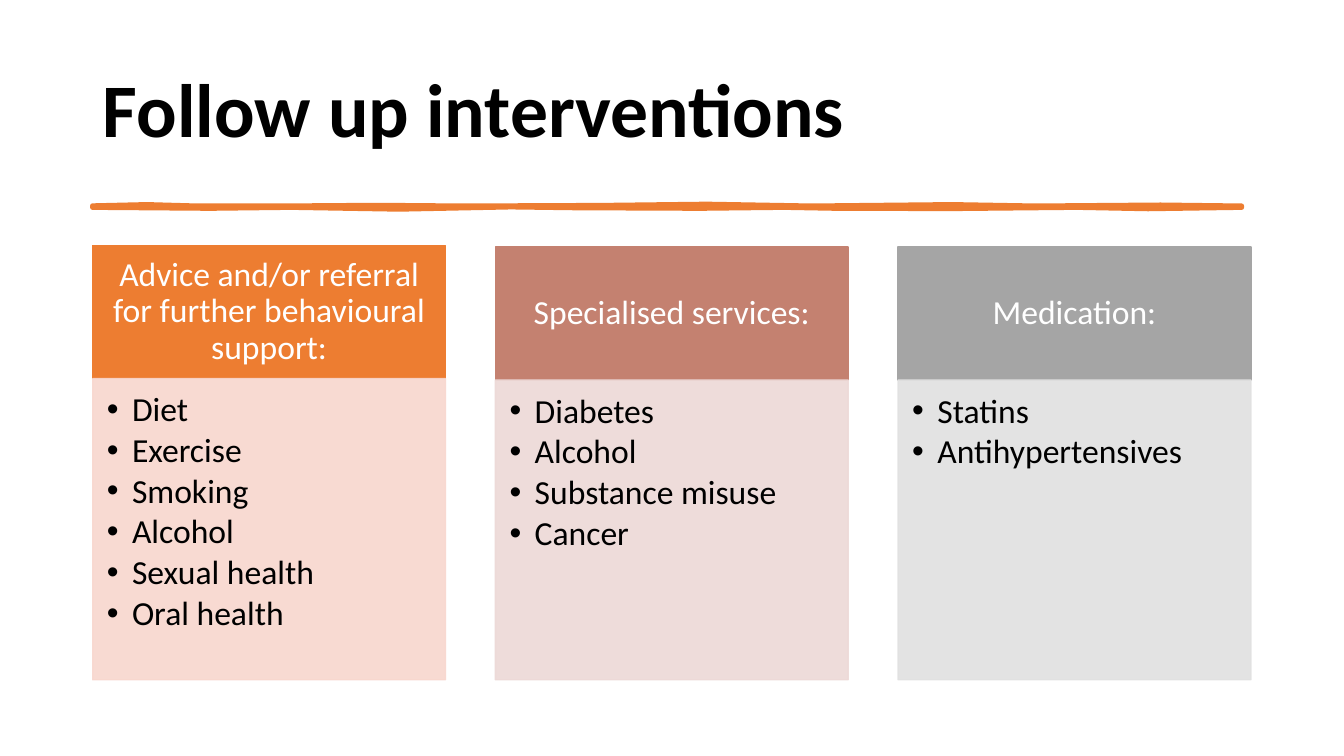
from dataclasses import dataclass

from lxml.etree import SubElement
from pptx import Presentation
from pptx.dml.color import RGBColor
from pptx.enum.shapes import MSO_SHAPE
from pptx.enum.text import MSO_ANCHOR, MSO_AUTO_SIZE, PP_ALIGN
from pptx.oxml.ns import qn
from pptx.shapes.autoshape import Shape
from pptx.slide import Slide
from pptx.text.text import _Paragraph as Paragraph
from pptx.util import Pt

COLOURS = {
    "text": "000000",
    "header text": "FFFFFF",
    "orange": "ED7D31",
    "pale orange": "F8D7CE",
    "rose": "C48170",
    "pale rose": "EDD9D7",
    "grey": "A5A5A5",
    "pale grey": "E1E1E1",
}
FONT = "Calibri"
LEFT = 66.24
COLUMN_WIDTH = 252
COLUMN_PITCH = 287.64
HEADER_HEIGHT = 95
BODY_BOTTOM = 485.6
RULE_TOP_EDGE = [
    (66, 146.9), (105, 146), (137, 146.9), (200, 147), (270, 146.5),
    (331, 147), (430, 146.6), (505, 145.7), (580, 147), (680, 146),
    (740, 147), (829, 146.3), (887, 147),
]
RULE_BOTTOM_EDGE = [
    (887, 148.3), (820, 149.3), (769, 148.3), (680, 149.2), (597, 149),
    (560, 148.3), (500, 149), (410, 148.6), (365, 148), (285, 149.6),
    (208, 148.3), (150, 149), (66, 148.3),
]


@dataclass
class Column:
    """A coloured heading above a bulleted list."""

    heading: str
    items: list[str]
    colour: str
    top: float = 176.4


COLUMNS = [
    Column(
        "Advice and/or referral for further behavioural support:",
        ["Diet", "Exercise", "Smoking", "Alcohol", "Sexual health", "Oral health"],
        "orange",
        top=175.4,
    ),
    Column(
        "Specialised services:",
        ["Diabetes", "Alcohol", "Substance misuse", "Cancer"],
        "rose",
    ),
    Column("Medication:", ["Statins", "Antihypertensives"], "grey"),
]


def rgb(name: str) -> RGBColor:
    """Return the named colour."""
    return RGBColor.from_string(COLOURS[name])


def format_paragraph(
    paragraph: Paragraph, size: float, colour: str, alignment: PP_ALIGN, bold: bool = False
) -> None:
    """Set the spacing, alignment and run fonts of a paragraph."""
    paragraph.alignment = alignment
    paragraph.line_spacing = 0.9
    paragraph.space_before = Pt(0)
    for run in paragraph.runs:
        run.font.name = FONT
        run.font.size = Pt(size)
        run.font.bold = bold
        run.font.color.rgb = rgb(colour)


def add_bullet(paragraph: Paragraph) -> None:
    """Give a paragraph a round bullet with a hanging indent."""
    properties = paragraph._p.get_or_add_pPr()
    properties.set("marL", str(Pt(18)))
    properties.set("indent", str(Pt(-18)))
    SubElement(properties, qn("a:buFont")).set("typeface", "Arial")
    SubElement(properties, qn("a:buChar")).set("char", "•")


def paint(shape: Shape, colour: str, line_width: float) -> None:
    """Use one colour for fill and outline and remove the shadow."""
    shape.shadow.inherit = False
    shape.fill.solid()
    shape.fill.fore_color.rgb = rgb(colour)
    shape.line.color.rgb = rgb(colour)
    shape.line.width = Pt(line_width)


def set_opacity(shape: Shape, percent: int) -> None:
    """Make the fill and outline partly transparent."""
    for colour in shape._element.spPr.iter(qn("a:srgbClr")):
        SubElement(colour, qn("a:alpha")).set("val", str(percent * 1000))


def add_box(
    slide: Slide, left: float, top: float, height: float, colour: str,
    insets: tuple[float, float, float, float], anchor: MSO_ANCHOR, text: str,
) -> Shape:
    """Add a column-wide rectangle with text."""
    box = slide.shapes.add_shape(
        MSO_SHAPE.RECTANGLE, Pt(left), Pt(top), Pt(COLUMN_WIDTH), Pt(height)
    )
    paint(box, colour, 1)
    frame = box.text_frame
    frame.margin_left, frame.margin_top, frame.margin_right, frame.margin_bottom = map(Pt, insets)
    frame.vertical_anchor = anchor
    frame.word_wrap = True
    frame.text = text
    return box


def add_column(slide: Slide, column: Column, left: float) -> None:
    """Draw the heading and the list of one column."""
    header = add_box(
        slide, left, column.top, HEADER_HEIGHT, column.colour,
        (13.44, 7.68, 13.44, 7.68), MSO_ANCHOR.MIDDLE, column.heading,
    )
    format_paragraph(header.text_frame.paragraphs[0], 24, "header text", PP_ALIGN.CENTER)

    body_top = column.top + HEADER_HEIGHT
    body = add_box(
        slide, left, body_top, BODY_BOTTOM - body_top, f"pale {column.colour}",
        (10.08, 10.08, 13.44, 15.12), MSO_ANCHOR.TOP, "\n".join(column.items),
    )
    set_opacity(body, 90)
    for paragraph in body.text_frame.paragraphs:
        format_paragraph(paragraph, 24, "text", PP_ALIGN.LEFT)
        paragraph.space_after = Pt(3.2)
        add_bullet(paragraph)


def add_title(slide: Slide, text: str) -> None:
    """Place and format the title placeholder."""
    title = slide.shapes.title
    title.left, title.top, title.width, title.height = Pt(LEFT), Pt(28.8), Pt(828), Pt(104.4)
    frame = title.text_frame
    frame.text = text
    frame.word_wrap = True
    frame.auto_size = MSO_AUTO_SIZE.NONE
    frame.vertical_anchor = MSO_ANCHOR.MIDDLE
    format_paragraph(frame.paragraphs[0], 54, "text", PP_ALIGN.LEFT, bold=True)


def add_wavy_rule(slide: Slide) -> None:
    """Draw the uneven hand-drawn rule under the title."""
    points = [(Pt(x), Pt(y)) for x, y in RULE_TOP_EDGE + RULE_BOTTOM_EDGE]
    builder = slide.shapes.build_freeform(*points[0])
    builder.add_line_segments(points[1:], close=True)
    paint(builder.convert_to_shape(), "orange", 3.25)


def main() -> None:
    """Build and save the slide."""
    presentation = Presentation()
    presentation.slide_width, presentation.slide_height = Pt(960), Pt(540)
    slide = presentation.slides.add_slide(presentation.slide_layouts.get_by_name("Title Only"))
    add_title(slide, "Follow up interventions")
    add_wavy_rule(slide)
    for index, column in enumerate(COLUMNS):
        add_column(slide, column, LEFT + index * COLUMN_PITCH)
    presentation.save("out.pptx")


if __name__ == "__main__":
    main()
